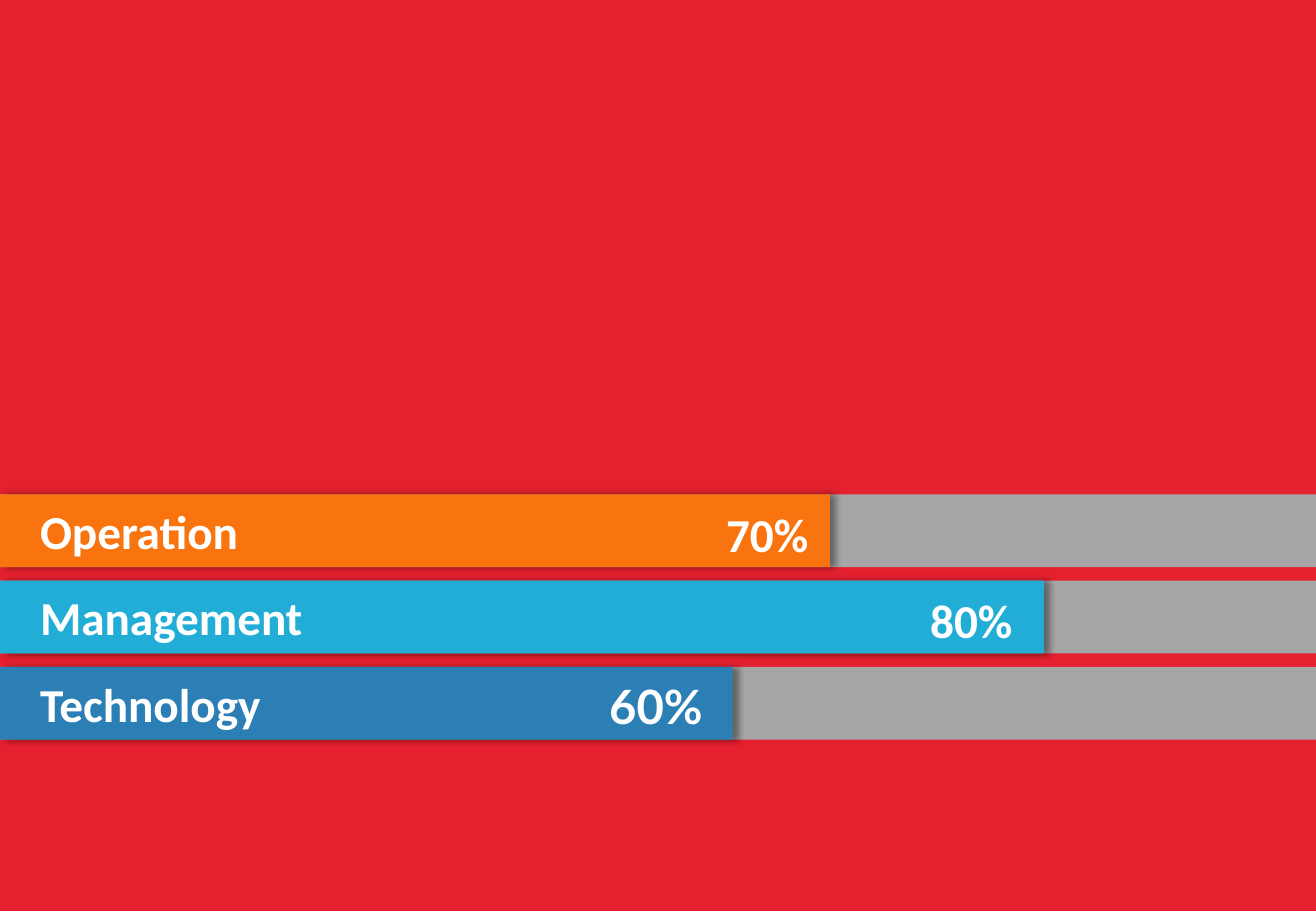
from dataclasses import dataclass

from lxml.etree import SubElement
from pptx import Presentation
from pptx.dml.color import RGBColor
from pptx.enum.shapes import MSO_SHAPE
from pptx.enum.text import MSO_ANCHOR, PP_ALIGN
from pptx.oxml.ns import qn
from pptx.shapes.autoshape import Shape
from pptx.shapes.shapetree import GroupShapes
from pptx.text.text import TextFrame
from pptx.util import Inches, Pt

RED = RGBColor(0xE5, 0x20, 0x2F)
GREY = RGBColor(0xA6, 0xA6, 0xA6)
ORANGE = RGBColor(0xF9, 0x74, 0x0F)
CYAN = RGBColor(0x22, 0xAD, 0xD6)
BLUE = RGBColor(0x2C, 0x7F, 0xB5)
WHITE = RGBColor(0xFF, 0xFF, 0xFF)

WIDTH = 10.83
TOP = 4.07
PITCH = 0.71
HEIGHT = 0.6


@dataclass
class Skill:
    name: str
    rate: str
    color: RGBColor
    length: float
    left: float
    width: float = 0.89
    font: str = "Calibri"


SKILLS = [
    Skill("Operation", "70%", ORANGE, 6.83, 5.86),
    Skill("Management", "80%", CYAN, 8.59, 7.54),
    Skill("Technology", "60%", BLUE, 6.03, 4.89, 0.99, "Lato"),
]


def write(frame: TextFrame, text: str, *, font: str = "Calibri", size: float = 28,
          color: RGBColor = WHITE, bold: bool = True,
          align: PP_ALIGN = PP_ALIGN.LEFT) -> None:
    para = frame.paragraphs[0]
    para.alignment = align
    run = para.add_run()
    run.text = text
    run.font.name = font
    run.font.size = Pt(size)
    run.font.bold = bold
    run.font.color.rgb = color


def add_bar(shapes: GroupShapes, top: float, width: float, color: RGBColor) -> Shape:
    bar = shapes.add_shape(MSO_SHAPE.RECTANGLE, 0, Inches(top), Inches(width), Inches(HEIGHT))
    bar.shadow.inherit = False
    bar.fill.solid()
    bar.fill.fore_color.rgb = color
    bar.line.fill.background()
    return bar


def add_shade(bar: Shape) -> None:
    effects = bar._element.spPr.find(qn("a:effectLst"))
    shade = SubElement(effects, qn("a:outerShdw"), blurRad=str(Pt(4)), dist=str(Pt(3)),
                       dir="0", algn="l", rotWithShape="0")
    color = SubElement(shade, qn("a:srgbClr"), val="000000")
    SubElement(color, qn("a:alpha"), val="40000")


def add_skill(shapes: GroupShapes, skill: Skill, top: float) -> None:
    add_bar(shapes, top, WIDTH, GREY)
    bar = add_bar(shapes, top, skill.length, skill.color)
    add_shade(bar)
    frame = bar.text_frame
    frame.vertical_anchor = MSO_ANCHOR.MIDDLE
    frame.margin_left = Inches(0.33)
    frame.margin_right = Inches(0.24)
    write(frame, skill.name)

    box = shapes.add_textbox(Inches(skill.left), Inches(top + 0.04),
                             Inches(skill.width), Inches(0.57))
    box.text_frame.word_wrap = False
    write(box.text_frame, skill.rate, font=skill.font, align=PP_ALIGN.RIGHT)


def main() -> None:
    deck = Presentation()
    deck.slide_width = Inches(WIDTH)
    deck.slide_height = Inches(7.5)
    slide = deck.slides.add_slide(deck.slide_layouts[6])
    slide.background.fill.solid()
    slide.background.fill.fore_color.rgb = RED
    group = slide.shapes.add_group_shape()
    for row, skill in enumerate(SKILLS):
        add_skill(group.shapes, skill, TOP + row * PITCH)
    deck.save("out.pptx")


if __name__ == "__main__":
    main()
